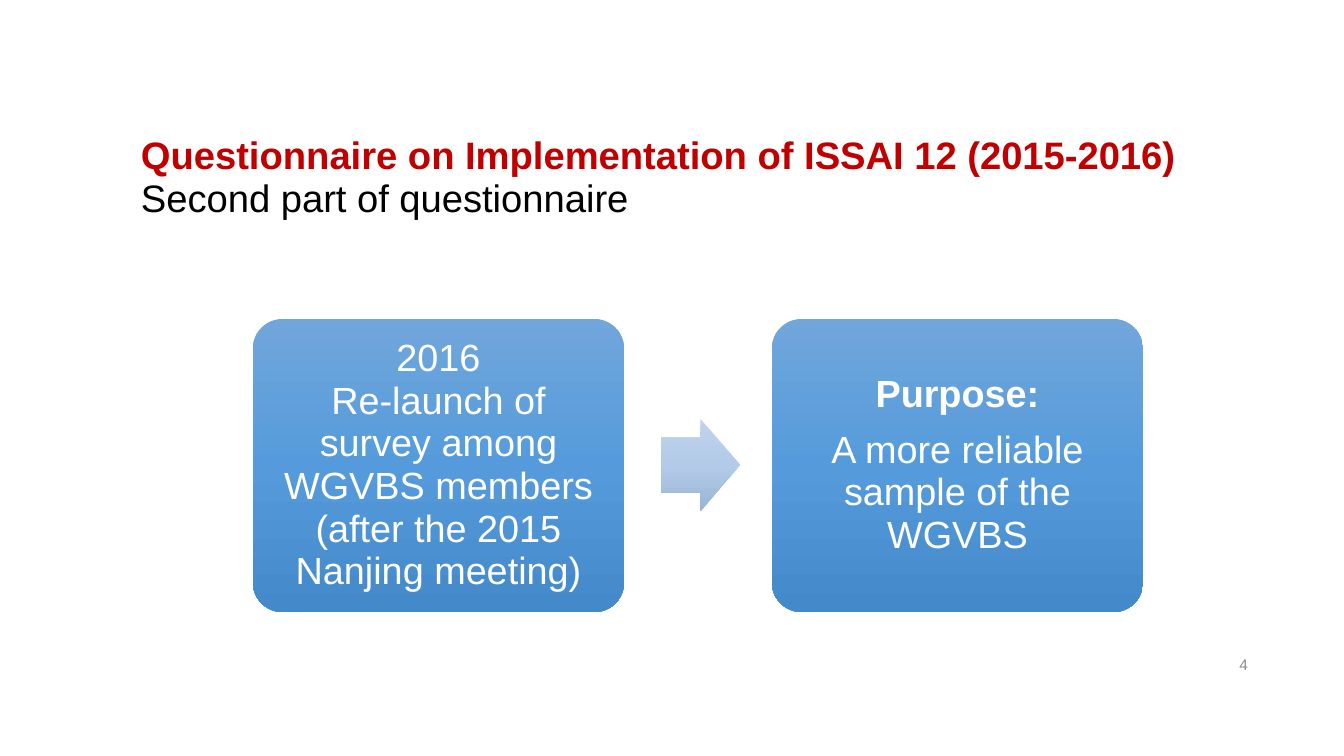
from lxml.etree import SubElement
from pptx import Presentation
from pptx.dml.color import RGBColor
from pptx.enum.shapes import MSO_SHAPE
from pptx.enum.text import MSO_ANCHOR, PP_ALIGN
from pptx.oxml.ns import qn
from pptx.util import Emu, Pt

EMU_PER_PX = 914400 / 100.8
FONT = "Arial"
RED = RGBColor(0xC0, 0x00, 0x00)
BLACK = RGBColor(0x00, 0x00, 0x00)
WHITE = RGBColor(0xFF, 0xFF, 0xFF)
GRAY = RGBColor(0x8C, 0x8C, 0x8C)
BOX_BLUES = [RGBColor(0x71, 0xA6, 0xDB), RGBColor(0x55, 0x9B, 0xDB), RGBColor(0x44, 0x8A, 0xCA)]
ARROW_BLUES = [RGBColor(0xC0, 0xD2, 0xEB), RGBColor(0xB3, 0xCB, 0xE9), RGBColor(0x9B, 0xB4, 0xD3)]


def px(length):
    """Turn a length in px into EMU."""
    return Emu(round(length * EMU_PER_PX))


class SlideBuilder:
    """Holds the style and the current slide."""

    def __init__(self, presentation):
        """Add a blank slide to the presentation."""
        self.slide = presentation.slides.add_slide(presentation.slide_layouts[6])

    def fill_text(self, shape, paragraphs, size, align, line_spacing=1.0, space_after=0):
        """Fill a shape with paragraphs, each a list of lines (text, color, bold)."""
        frame = shape.text_frame
        frame.word_wrap = True
        frame.vertical_anchor = MSO_ANCHOR.MIDDLE
        for index, lines in enumerate(paragraphs):
            paragraph = frame.paragraphs[0] if index == 0 else frame.add_paragraph()
            paragraph.alignment = align
            paragraph.line_spacing = line_spacing
            paragraph.space_after = Pt(space_after)
            paragraph.font.size = Pt(size)
            for number, (text, color, bold) in enumerate(lines):
                if number:
                    paragraph.add_line_break()
                run = paragraph.add_run()
                run.text = text
                run.font.name = FONT
                run.font.size = Pt(size)
                run.font.bold = bold
                run.font.color.rgb = color

    def text(self, left, top, width, height, paragraphs, size, align, line_spacing=1.0):
        """Add a text box."""
        shape = self.slide.shapes.add_textbox(px(left), px(top), px(width), px(height))
        self.fill_text(shape, paragraphs, size, align, line_spacing)

    def gradient_shape(self, kind, left, top, width, height, adjustments, colors):
        """Add a preset shape with an even top-to-bottom gradient."""
        shape = self.slide.shapes.add_shape(kind, px(left), px(top), px(width), px(height))
        for index, value in enumerate(adjustments):
            shape.adjustments[index] = value
        shape.shadow.inherit = False
        shape.line.fill.background()
        shape.fill.gradient()
        shape.fill.gradient_angle = 270
        stops = shape.element.spPr.find(qn("a:gradFill")).find(qn("a:gsLst"))
        for stop in list(stops):
            stops.remove(stop)
        for index, color in enumerate(colors):
            position = 100000 * index // (len(colors) - 1)
            stop = SubElement(stops, qn("a:gs"), pos=str(position))
            SubElement(stop, qn("a:srgbClr"), val=str(color))
        return shape

    def box(self, left, paragraphs):
        """Add a rounded box with centred white text."""
        shape = self.gradient_shape(
            MSO_SHAPE.ROUNDED_RECTANGLE, left, 319, 371, 293, [0.1], BOX_BLUES)
        frame = shape.text_frame
        frame.margin_left = frame.margin_right = px(11)
        frame.margin_top = frame.margin_bottom = px(11)
        self.fill_text(shape, paragraphs, 27, PP_ALIGN.CENTER, 0.94, 9)

    def arrow(self, left, top, width, height):
        """Add the block arrow between the boxes."""
        self.gradient_shape(
            MSO_SHAPE.RIGHT_ARROW, left, top, width, height, [0.6, 0.5], ARROW_BLUES)


def main():
    """Build the slide and save it."""
    presentation = Presentation()
    presentation.slide_width = px(1344)
    presentation.slide_height = px(756)
    builder = SlideBuilder(presentation)
    builder.text(956, 644, 302, 40, [[("4", GRAY, False)]], 11, PP_ALIGN.RIGHT)
    builder.box(253, [[
        ("2016", WHITE, False),
        ("Re-launch of survey among WGVBS members (after the 2015 Nanjing meeting)", WHITE, False),
    ]])
    builder.arrow(661, 419, 79, 92)
    builder.box(772, [
        [("Purpose:", WHITE, True)],
        [("A more reliable sample of the WGVBS", WHITE, False)],
    ])
    builder.text(131, 122, 1154, 112, [[
        ("Questionnaire on Implementation of ISSAI 12 (2015-2016)", RED, True),
        ("Second part of questionnaire", BLACK, False),
    ]], 27.3, PP_ALIGN.LEFT, 0.94)
    presentation.save("out.pptx")


if __name__ == "__main__":
    main()
